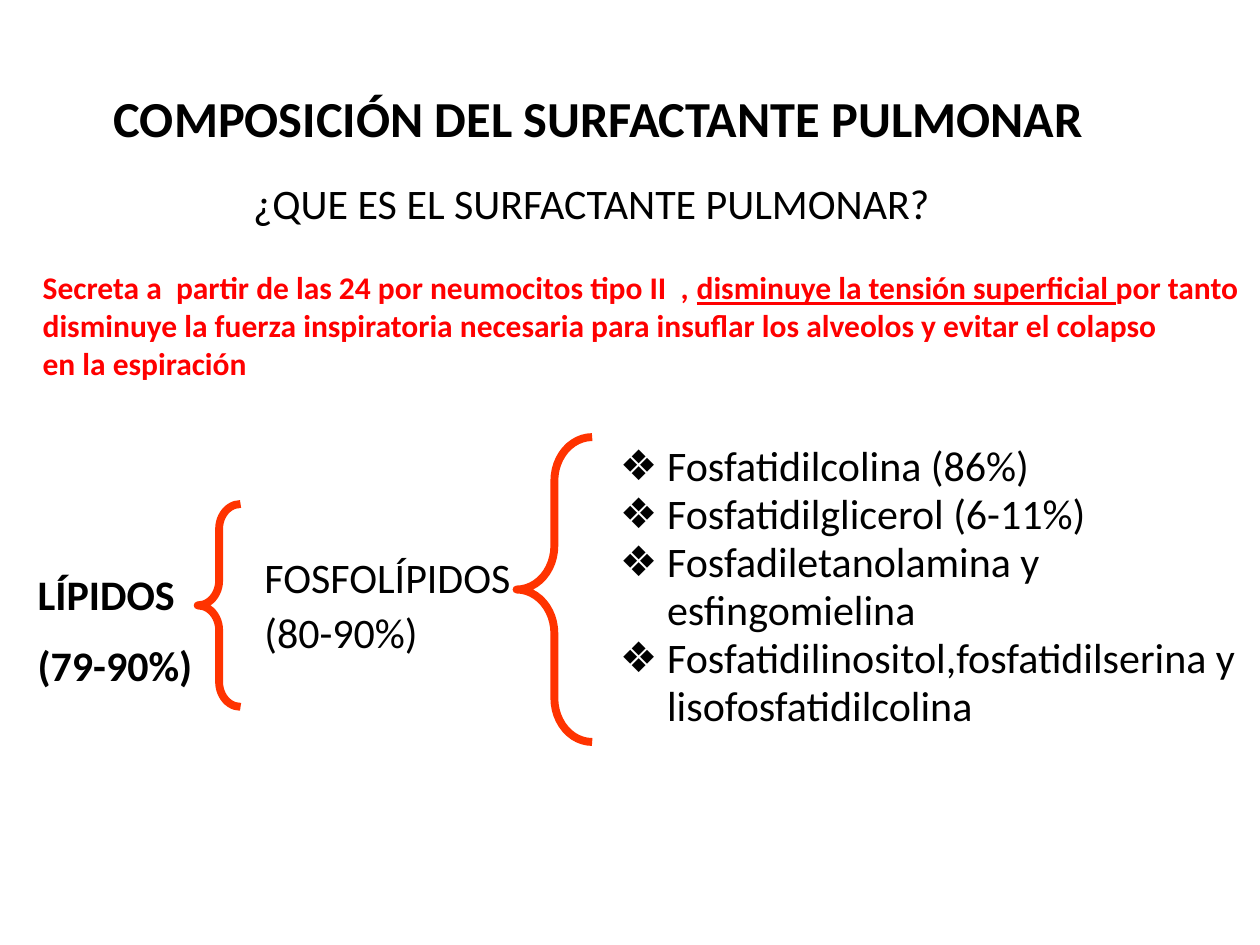
from lxml import etree
from pptx import Presentation
from pptx import util as u
from pptx.dml.color import RGBColor
from pptx.enum import shapes, text
from pptx.oxml.ns import qn

COLORS = {"ink": "000000", "accent": "FF0000", "brace": "FF3300"}
FONT = "Calibri"

# Content: a paragraph is a list of (text, underlined) runs or a plain string
TITLE = "COMPOSICIÓN DEL SURFACTANTE PULMONAR"
COMPONENTS = [
    "Fosfatidilcolina (86%)",
    "Fosfatidilglicerol (6-11%)",
    "Fosfadiletanolamina y esfingomielina",
    "Fosfatidilinositol,fosfatidilserina y lisofosfatidilcolina",
]
DEFINITION = [
    [("Secreta a  partir de las 24 por neumocitos tipo II  , ", False),
     ("disminuye la tensión superficial ", True),
     ("por tanto", False)],
    "disminuye la fuerza inspiratoria necesaria para insuflar los alveolos y evitar el colapso",
    "en la espiración",
]
# Boxes: lines, (left, top, width, height), size, bold, color, gap between paragraphs, wrap
TEXT_BOXES = [
    (["FOSFOLÍPIDOS", "(80-90%)"], (144, 311.8, 167.8, 68.4), 24, False, "ink", 2.4, True),
    (["LÍPIDOS", "(79-90%)"], (14.4, 321.1, 133.2, 79.9), 24, True, "ink", 12, True),
    (["¿QUE ES EL SURFACTANTE PULMONAR?"], (137.5, 97.9, 404.6, 36), 24, False, "ink", 0, False),
    (DEFINITION, (17.3, 149.8, 716.4, 72.7), 18, True, "accent", 0, False),
]
# Braces: (left, top, width, height), curve
BRACES = [
    ((113, 288, 24.5, 115.9), 0.58),
    ((295.2, 249.8, 43.2, 174.2), 0.58),
]


def points(box):
    return [u.Pt(value) for value in box]


def place(shape, box):
    shape.left, shape.top, shape.width, shape.height = points(box)


def write(frame, lines, size, bold=False, color="ink", gap=0):
    for index, line in enumerate(lines):
        paragraph = frame.paragraphs[0] if index == 0 else frame.add_paragraph()
        for words, underlined in [(line, False)] if isinstance(line, str) else line:
            run = paragraph.add_run()
            run.text = words
            if underlined:
                run.font.underline = True
        paragraph.space_before = u.Pt(gap if index else 0)
        font = paragraph.font
        font.name, font.size, font.bold = FONT, u.Pt(size), bold
        font.color.rgb = RGBColor.from_string(COLORS[color])


def add_bullet(paragraph, character, indent):
    properties = paragraph._p.get_or_add_pPr()
    properties.set("marL", str(u.Pt(indent)))
    properties.set("indent", str(-u.Pt(indent)))
    bullet = etree.Element(qn("a:buChar"), char=character)
    defaults = properties.find(qn("a:defRPr"))
    if defaults is None:
        properties.append(bullet)
    else:
        defaults.addprevious(bullet)


presentation = Presentation()
presentation.slide_width, presentation.slide_height = u.Pt(720), u.Pt(540)
slide = presentation.slides.add_slide(presentation.slide_layouts[1])

# Title
title = slide.shapes.title
place(title, (36, 44.6, 612, 45.4))
write(title.text_frame, [TITLE], 28.8, bold=True)
title.text_frame.auto_size = text.MSO_AUTO_SIZE.NONE
title.text_frame.vertical_anchor = text.MSO_ANCHOR.MIDDLE
title.text_frame.paragraphs[0].alignment = text.PP_ALIGN.CENTER

# Phospholipid list
body = slide.placeholders[1]
place(body, (347, 249.8, 373, 238.3))
write(body.text_frame, COMPONENTS, 24)
body.text_frame.auto_size = text.MSO_AUTO_SIZE.NONE
for paragraph in body.text_frame.paragraphs:
    paragraph.line_spacing = 0.95
    add_bullet(paragraph, "❖", 27)

# Labels, question and definition
for lines, box, size, bold, color, gap, wrap in TEXT_BOXES:
    frame = slide.shapes.add_textbox(*points(box)).text_frame
    frame.word_wrap = wrap
    frame.auto_size = text.MSO_AUTO_SIZE.SHAPE_TO_FIT_TEXT
    write(frame, lines, size, bold, color, gap)

# Braces
for box, curve in BRACES:
    brace = slide.shapes.add_shape(shapes.MSO_SHAPE.LEFT_BRACE, *points(box))
    brace.adjustments[0], brace.adjustments[1] = curve, 0.5
    brace.shadow.inherit = False
    brace.fill.background()
    brace.line.color.rgb = RGBColor.from_string(COLORS["brace"])
    brace.line.width = u.Pt(4.5)

presentation.save("out.pptx")
